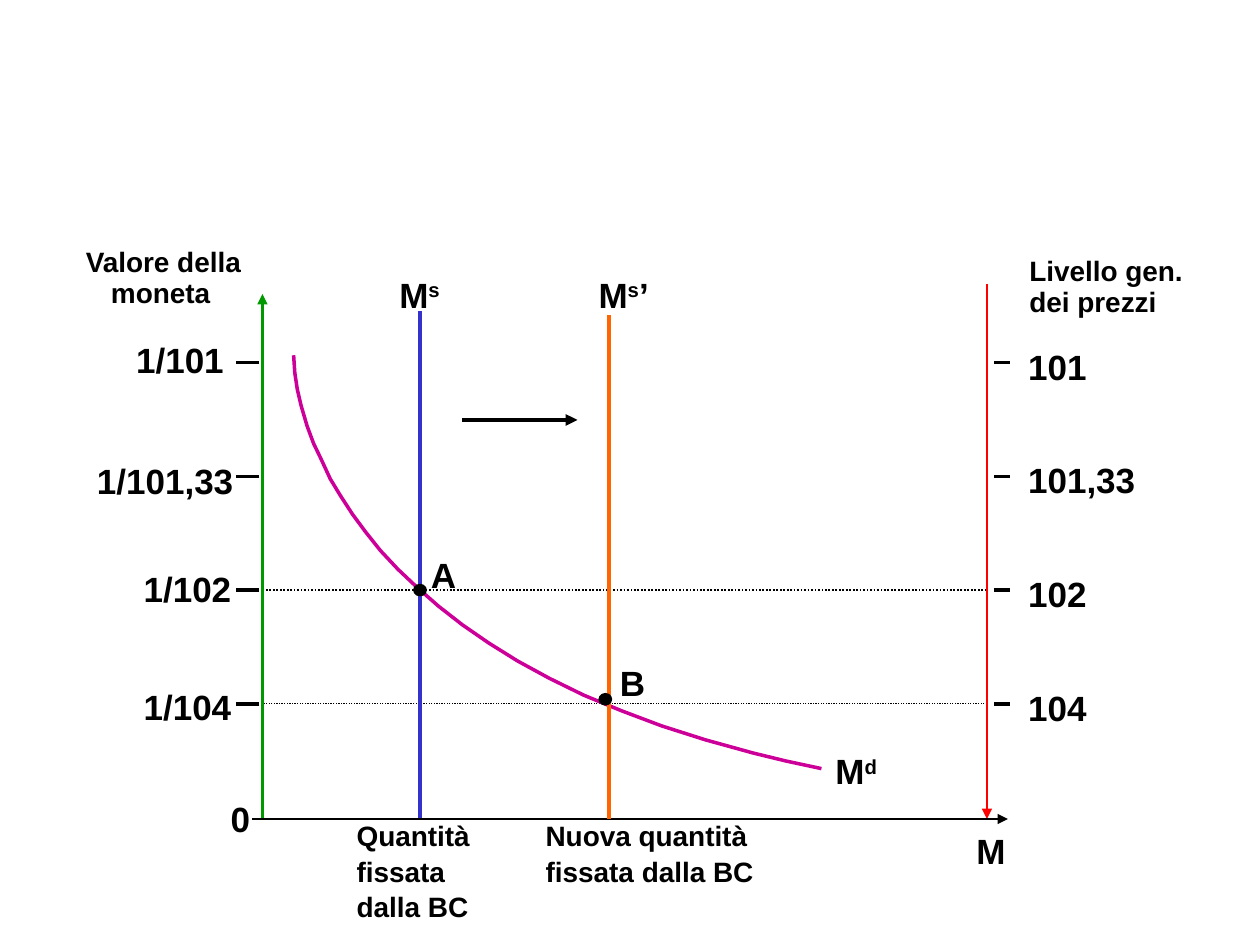
import pptx
import pptx.dml.color
import pptx.enum.dml
import pptx.enum.shapes
import pptx.enum.text
import pptx.oxml.ns
import pptx.util
from lxml import etree

Pt = pptx.util.Pt
COLORS = {
    "ink": "000000",
    "value_axis": "009900",
    "price_axis": "FF0000",
    "supply": "3333CC",
    "new_supply": "FF6600",
    "demand": "CC0099",
}
VALUE_X, PRICE_X, BASE_Y = 150, 564, 468
SUPPLY_X, NEW_SUPPLY_X = 240, 348
FIRST_TICK_Y, TICK_GAP = 207.2, 65

LEVELS = [
    {"price": "101", "left": 77.8, "top": 193.7, "width": 50.4, "price_width": 33.8},
    {"price": "101,33", "left": 55.4, "top": 262.8, "width": 78.5, "price_width": 61.9},
    {"price": "102", "left": 82.1, "top": 324, "width": 50.4, "price_width": 33.8},
    {"price": "104", "left": 82.1, "top": 391.7, "width": 50.4, "price_width": 33.8},
]
CAPTIONS = [
    (["Quantità", "fissata", "dalla BC"], 203.8, 468, 69.8),
    (["Nuova quantità", "fissata dalla BC"], 311.8, 468, 119.5),
    (["Valore della"], 49, 139.7, 90),
    (["moneta"], 63.4, 157.7, 56.9),
    (["Livello gen."], 588.2, 144.7, 87.8),
    (["dei prezzi"], 588.2, 162.7, 72.7),
]
SYMBOLS = [
    ("M", "", "", 558, 473.8, 16.6),
    ("0", "", "", 131.8, 455.8, 10.8),
    ("A", "", "", 246.2, 316.1, 14.4),
    ("B", "", "", 354.2, 378, 14.4),
    ("M", "s", "", 228.2, 156.2, 23.8),
    ("M", "s", "’", 342, 156.2, 29.5),
    ("M", "d", "", 477.4, 428.4, 24.5),
]
GUIDES = [(VALUE_X, 337.2, PRICE_X, 337.2, 1), (PRICE_X, 402, VALUE_X, 402, 0.75)]
SUPPLY_LINES = [
    (SUPPLY_X, 467.3, SUPPLY_X, 177.8, "supply", 2),
    (NEW_SUPPLY_X, 180, NEW_SUPPLY_X, BASE_Y, "new_supply", 2.25),
]
ARROWS = [
    (PRICE_X, 162, PRICE_X, BASE_Y, "price_axis", 1.5),
    (VALUE_X, BASE_Y, VALUE_X, 168, "value_axis", 1.5),
    (144, BASE_Y, 576, BASE_Y, "ink", 0.75),
    (264, 240, 330, 240, "ink", 2.25),
]
DEMAND = [
    (167.8, 203), (168.5, 213.1), (169.9, 222.5), (172.1, 231.8), (175.5, 243.4),
    (179.2, 253.4), (183.4, 262.1), (188.7, 273.6), (194.4, 283), (201.4, 293.8),
    (208.8, 303.8), (217.4, 314.6), (227.3, 325.2), (238.3, 335.6), (250.6, 346.4),
    (264.2, 357), (279.2, 367.4), (295.9, 377.8), (313.9, 387.6), (333.5, 397.2),
    (355, 406.1), (378.1, 414.8), (403.2, 422.8), (430.4, 430.3), (449.3, 434.9),
    (469.4, 439.2),
]
DOTS = [(SUPPLY_X, 337.2), (345.9, 399.6)]

presentation = pptx.Presentation()
presentation.slide_width, presentation.slide_height = Pt(720), Pt(540)
slide = presentation.slides.add_slide(presentation.slide_layouts[6])


def color(name):
    return pptx.dml.color.RGBColor.from_string(COLORS[name])


def add_text(lines, left, top, width, size=20, raised="", ending="", line_gap=0):
    box = slide.shapes.add_textbox(Pt(left), Pt(top), Pt(width), Pt(len(lines) * size * 1.2))
    frame = box.text_frame
    frame.word_wrap = False
    frame.auto_size = pptx.enum.text.MSO_AUTO_SIZE.SHAPE_TO_FIT_TEXT
    frame.margin_left = frame.margin_right = frame.margin_top = frame.margin_bottom = 0
    for index, line in enumerate(lines):
        paragraph = frame.add_paragraph() if index else frame.paragraphs[0]
        if index:
            paragraph.space_before = Pt(line_gap)
        for text, baseline in ((line, 0), (raised, 30000), (ending, 0)):
            if not text:
                continue
            run = paragraph.add_run()
            run.text = text
            run.font.name = "Arial"
            run.font.size = Pt(size)
            run.font.bold = True
            run.font.color.rgb = color("ink")
            if baseline:
                run._r.get_or_add_rPr().set("baseline", str(baseline))


def add_line(x1, y1, x2, y2, name="ink", width=2, dotted=False, arrow=False):
    connector = slide.shapes.add_connector(
        pptx.enum.shapes.MSO_CONNECTOR.STRAIGHT, Pt(x1), Pt(y1), Pt(x2), Pt(y2))
    connector.line.color.rgb = color(name)
    connector.line.width = Pt(width)
    if dotted:
        connector.line.dash_style = pptx.enum.dml.MSO_LINE.ROUND_DOT
    if arrow:
        tail = etree.SubElement(connector.line._get_or_add_ln(), pptx.oxml.ns.qn("a:tailEnd"))
        tail.set("type", "triangle")
    etree.SubElement(connector._element.spPr, pptx.oxml.ns.qn("a:effectLst"))


def add_demand_curve():
    builder = slide.shapes.build_freeform(
        *(Pt(value) for value in DEMAND[0]), scale=1.0)
    builder.add_line_segments([(Pt(x), Pt(y)) for x, y in DEMAND[1:]], close=False)
    curve = builder.convert_to_shape()
    curve.shadow.inherit = False
    curve.fill.background()
    curve.line.color.rgb = color("demand")
    curve.line.width = Pt(2)


def add_dot(x, y, width=7.9, height=7.2):
    dot = slide.shapes.add_shape(
        pptx.enum.shapes.MSO_SHAPE.OVAL,
        Pt(x - width / 2), Pt(y - height / 2), Pt(width), Pt(height))
    dot.shadow.inherit = False
    dot.fill.solid()
    dot.fill.fore_color.rgb = color("ink")
    dot.line.fill.background()


for lines, left, top, width in CAPTIONS:
    add_text(lines, left, top, width, size=16, line_gap=1)
for x1, y1, x2, y2, width in GUIDES:
    add_line(x1, y1, x2, y2, width=width, dotted=True)
for index, level in enumerate(LEVELS):
    y = FIRST_TICK_Y + index * TICK_GAP
    add_line(148.3, y, 134.6, y)
    add_line(568.1, y, 577.4, y)
    add_text(["1/" + level["price"]], level["left"], level["top"], level["width"])
    add_text([level["price"]], 587.5, y - 10, level["price_width"])
for x1, y1, x2, y2, name, width in SUPPLY_LINES[:1]:
    add_line(x1, y1, x2, y2, name, width)
add_demand_curve()
for x1, y1, x2, y2, name, width in ARROWS:
    add_line(x1, y1, x2, y2, name, width, arrow=True)
for x1, y1, x2, y2, name, width in SUPPLY_LINES[1:]:
    add_line(x1, y1, x2, y2, name, width)
for x, y in DOTS:
    add_dot(x, y)
for text, raised, ending, left, top, width in SYMBOLS:
    add_text([text], left, top, width, raised=raised, ending=ending)

presentation.save("out.pptx")
